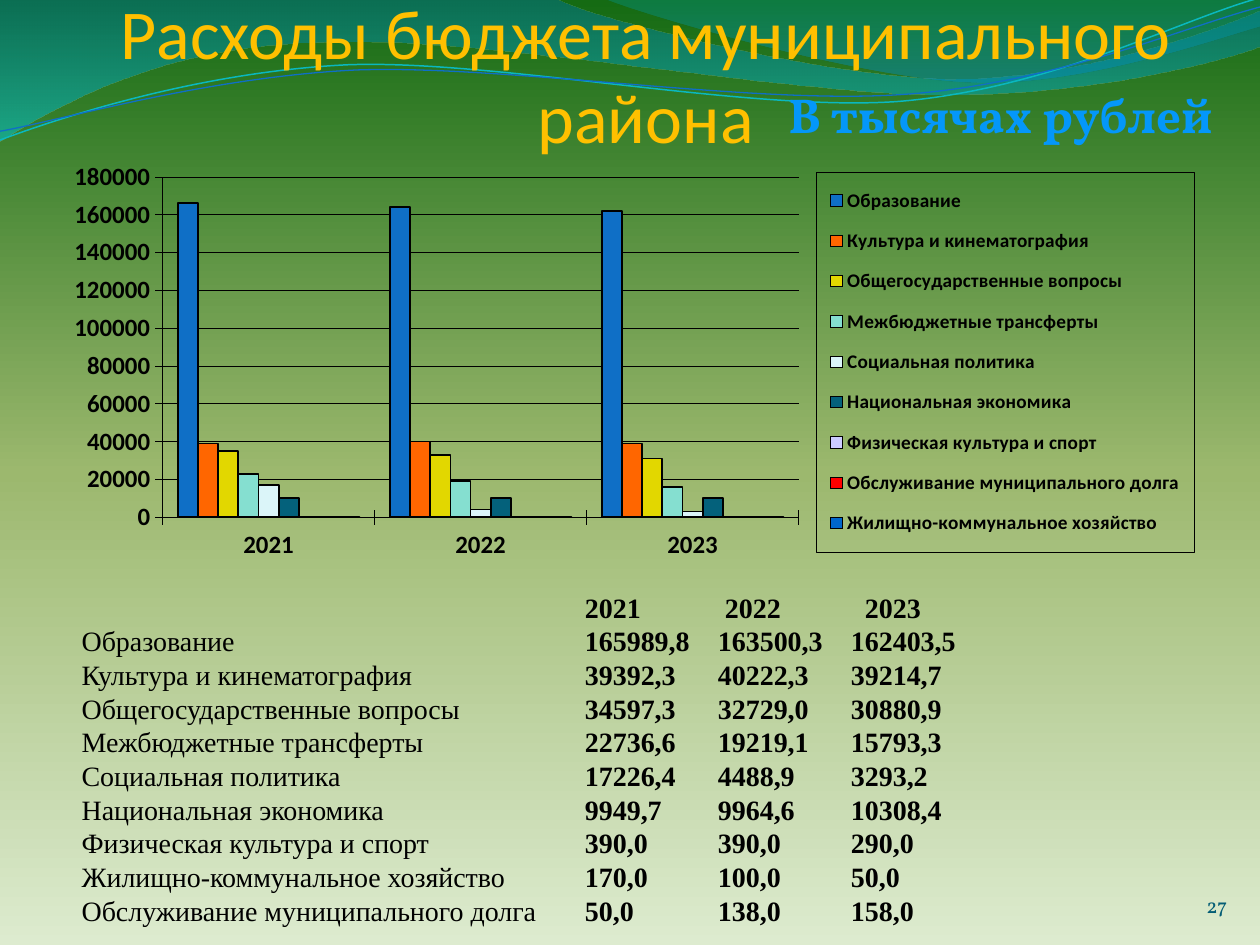
"""Build the slide on municipal district budget expenditure, 2021 to 2023."""
from dataclasses import dataclass
from math import cos, radians, sin
from typing import Optional

from lxml import etree
from pptx import Presentation
from pptx import util as u
from pptx.chart.data import CategoryChartData
from pptx.dml.color import RGBColor
from pptx.enum import chart as charts, text
from pptx.oxml import parse_xml
from pptx.oxml.ns import nsdecls, qn

COLORS = {
    "black": "000000", "gold": "FFC000", "page": "045D75",
    "cyan": "0AB8BF", "blue": "0F6FC6", "orange": "FF6600",
    "yellow": "E2D700", "mint": "85DFD0", "ice": "DBF5F9",
    "petrol": "04617B", "lilac": "CCCCFF", "red": "FF0000",
    "royal": "0066CC", "pale": "DDEBCF", "olive": "9CB86E",
    "forest": "156B13", "sea": "0074A1", "aqua": "00C6CF",
    "teal": "00A1A9", "lake": "008BBF", "sky": "7DC4FF", "azure": "0497F9",
}
YEARS = ("2021", "2022", "2023")
PIVOT = (359.5, 42)


@dataclass(frozen=True)
class Expense:
    """One budget line with its yearly amounts."""
    name: str
    color: str
    amounts: tuple


@dataclass(frozen=True)
class Wave:
    """A curved outline; one-point steps are straight, three-point steps are Bezier."""
    start: tuple
    steps: tuple
    stops: tuple = ()
    color: Optional[str] = None
    weight: float = 0
    tilt: float = 0


@dataclass(frozen=True)
class Label:
    """A single line of text in a box."""
    words: str
    box: tuple
    font: str
    size: float
    align: text.PP_ALIGN
    color: str = "black"
    stops: tuple = ()
    bold: bool = False
    anchor: text.MSO_ANCHOR = text.MSO_ANCHOR.TOP
    insets: tuple = (7.2, 3.6, 7.2, 3.6)


EXPENSES = (
    Expense("Образование", "blue", (165989.8, 163500.3, 162403.5)),
    Expense("Культура и кинематография", "orange", (39392.3, 40222.3, 39214.7)),
    Expense("Общегосударственные вопросы", "yellow", (34597.3, 32729.0, 30880.9)),
    Expense("Межбюджетные трансферты", "mint", (22736.6, 19219.1, 15793.3)),
    Expense("Социальная политика", "ice", (17226.4, 4488.9, 3293.2)),
    Expense("Национальная экономика", "petrol", (9949.7, 9964.6, 10308.4)),
    Expense("Физическая культура и спорт", "lilac", (390.0, 390.0, 290.0)),
    Expense("Обслуживание муниципального долга", "red", (50.0, 138.0, 158.0)),
    Expense("Жилищно-коммунальное хозяйство", "royal", (170.0, 100.0, 50.0)),
)
WAVES = (
    Wave((0, -1), (((317, -1),), ((343, 12), (478, 45), (546, 45)),
                   ((614, 45), (690, 19), (720, 6)), ((721, 26),),
                   ((708, 32), (626, 55), (537, 54)), ((447, 54), (275, 20), (185, 24)),
                   ((93, 25), (33, 60), (-1, 81))),
         stops=((0, "sea", 45), (100, "aqua", 55))),
    Wave((345, -1), (((366, 8), (491, 45), (554, 47)), ((616, 50), (692, 23), (720, 15)),
                     ((720, 0),)),
         stops=((0, "teal", 30), (80, "lake", 45))),
    Wave((0, 80), (((35, 67), (114, 41), (199, 37)), ((284, 34), (427, 64), (513, 58)),
                   ((600, 51), (675, 11), (719, -1))), color="cyan", weight=0.85, tilt=-2.7),
    Wave((0, 75), (((34, 69), (118, 44), (204, 40)), ((290, 37), (430, 60), (516, 54)),
                   ((602, 48), (678, 15), (720, 4))), color="blue", weight=0.75, tilt=-2.7),
)
LABELS = (
    Label("Расходы бюджета муниципального района", (45, 33.8, 648, 56.2), "Calibri", 40,
          text.PP_ALIGN.CENTER, "gold", anchor=text.MSO_ANCHOR.BOTTOM, insets=(0, 3.6, 0, 0)),
    Label("В тысячах рублей", (423.4, 44.6, 296.6, 41), "Vollkorn", 28, text.PP_ALIGN.CENTER,
          stops=((0, "sky", 100), (75, "azure", 100), (100, "sea", 100)), bold=True),
    Label("27", (641.5, 495.4, 59.8, 28.8), "Vollkorn", 12, text.PP_ALIGN.RIGHT, "page",
          anchor=text.MSO_ANCHOR.BOTTOM, insets=(0, 0, 0, 0)),
)


def rgb(name: str) -> RGBColor:
    return RGBColor.from_string(COLORS[name])


def set_gradient(fill, parent, stops: tuple, angle: int) -> None:
    fill.solid()
    marks = "".join(
        f'<a:gs pos="{place * 1000}"><a:srgbClr val="{COLORS[color]}">'
        + (f'<a:alpha val="{alpha * 1000}"/>' if alpha < 100 else "")
        + "</a:srgbClr></a:gs>" for place, color, alpha in stops)
    parent.replace(parent.find(qn("a:solidFill")), parse_xml(
        f'<a:gradFill {nsdecls("a")} rotWithShape="1"><a:gsLst>{marks}</a:gsLst>'
        f'<a:lin ang="{angle * 60000}" scaled="1"/></a:gradFill>'))


def style_font(font, name: str, size: float, color: str = "black", bold: bool = False) -> None:
    font.name, font.size, font.bold = name, u.Pt(size), bold
    font.color.rgb = rgb(color)


def style_line(line, color: str, weight: float) -> None:
    line.color.rgb = rgb(color)
    line.width = u.Pt(weight)


def level(point: tuple, tilt: float) -> tuple:
    turn = radians(-tilt)
    x, y = point[0] - PIVOT[0], point[1] - PIVOT[1]
    return (u.Pt(PIVOT[0] + x * cos(turn) - y * sin(turn)),
            u.Pt(PIVOT[1] + x * sin(turn) + y * cos(turn)))


def draw_wave(slide, wave: Wave) -> None:
    builder = slide.shapes.build_freeform(*level(wave.start, wave.tilt))
    builder.add_line_segments([level(point, wave.tilt) for step in wave.steps for point in step],
                              close=bool(wave.stops))
    ribbon = builder.convert_to_shape()
    ribbon.rotation = wave.tilt
    ribbon.shadow.inherit = False
    legs = iter(ribbon.element.findall(".//" + qn("a:lnTo")))
    for step in wave.steps:
        first, *others = [next(legs) for _ in step]
        if others:
            first.tag = qn("a:cubicBezTo")
            for leg in others:
                first.append(leg[0])
                leg.getparent().remove(leg)
    if wave.stops:
        set_gradient(ribbon.fill, ribbon.element.spPr, wave.stops, 90)
        ribbon.line.fill.background()
    else:
        ribbon.fill.background()
        style_line(ribbon.line, wave.color, wave.weight)


def draw_label(slide, label: Label) -> None:
    frame = slide.shapes.add_textbox(*map(u.Pt, label.box)).text_frame
    frame.word_wrap, frame.vertical_anchor = True, label.anchor
    (frame.margin_left, frame.margin_top,
     frame.margin_right, frame.margin_bottom) = map(u.Pt, label.insets)
    line = frame.paragraphs[0]
    line.alignment = label.align
    style_font(line.font, label.font, label.size, label.color, label.bold)
    words = line.add_run()
    words.text = label.words
    if label.stops:
        set_gradient(words.font.fill, words._r.get_or_add_rPr(), label.stops, 90)


def set_layout(parent, index: int, percents: tuple, inner: bool = False) -> None:
    for old in parent.findall(qn("c:layout")):
        parent.remove(old)
    layout = etree.Element(qn("c:layout"))
    manual = etree.SubElement(layout, qn("c:manualLayout"))
    settings = [("layoutTarget", "inner")] if inner else []
    settings += [("xMode", "edge"), ("yMode", "edge")]
    settings += [(side, f"{percent / 100:.3f}") for side, percent in zip("xywh", percents)]
    for tag, value in settings:
        etree.SubElement(manual, qn(f"c:{tag}")).set("val", value)
    parent.insert(index, layout)


def frame_xml(line: str):
    return parse_xml(f'<c:spPr {nsdecls("c", "a")}><a:noFill/>{line}</c:spPr>')


def draw_chart(slide) -> None:
    data = CategoryChartData(number_format="0")
    data.categories = YEARS
    for expense in EXPENSES:
        data.add_series(expense.name, [int(round(amount, -3)) for amount in expense.amounts])
    chart = slide.shapes.add_chart(charts.XL_CHART_TYPE.COLUMN_CLUSTERED,
                                   *map(u.Pt, (33.8, 84.2, 650.2, 248.4)), data).chart
    style_font(chart.font, "Calibri", 14.2, bold=True)
    chart.has_title = False
    chart.has_legend = True
    chart.legend.position = charts.XL_LEGEND_POSITION.RIGHT
    chart.legend.include_in_layout = False
    style_font(chart.legend.font, "Calibri", 11, bold=True)
    plot = chart.plots[0]
    plot.gap_width, plot.overlap, plot.vary_by_categories = 150, 0, False
    for series, expense in zip(plot.series, EXPENSES):
        series.format.fill.solid()
        series.format.fill.fore_color.rgb = rgb(expense.color)
        style_line(series.format.line, "black", 1)
    for axis in (chart.category_axis, chart.value_axis):
        axis.major_tick_mark = charts.XL_TICK_MARK.CROSS
        style_font(axis.tick_labels.font, "Calibri", 14.2, bold=True)
        style_line(axis.format.line, "black", 0.25)
    chart.category_axis.tick_label_position = charts.XL_TICK_LABEL_POSITION.LOW
    style_line(chart.value_axis.major_gridlines.format.line, "black", 0.25)
    space = chart.element
    area, legend = space.find(".//" + qn("c:plotArea")), space.find(".//" + qn("c:legend"))
    set_layout(area, 0, (9.1, 6.8, 55.9, 78.3), inner=True)
    set_layout(legend, 1, (66.5, 5.7, 33.3, 87.4))
    no_line = "<a:ln><a:noFill/></a:ln>"
    area.append(frame_xml(no_line))
    space.find(qn("c:chart")).addnext(frame_xml(no_line))
    legend.find(qn("c:overlay")).addnext(frame_xml(
        f'<a:ln w="3175"><a:solidFill><a:srgbClr val="{COLORS["black"]}"/></a:solidFill></a:ln>'))


def draw_amounts(slide) -> None:
    frame = slide.shapes.add_textbox(*map(u.Pt, (39.6, 333.7, 652.3, 203.8))).text_frame
    frame.word_wrap = True
    rows = [("", YEARS, (287.6, 367.6, 447.6))]
    for expense in (*EXPENSES[:-2], EXPENSES[-1], EXPENSES[-2]):
        amounts = [f"{amount:.1f}".replace(".", ",") for amount in expense.amounts]
        rows.append((expense.name, amounts, (287.6, 363.6, 439.6)))
    for index, (name, values, stops) in enumerate(rows):
        row = frame.add_paragraph() if index else frame.paragraphs[0]
        row.line_spacing = u.Pt(19.25)
        tabs = etree.SubElement(row._p.get_or_add_pPr(), qn("a:tabLst"))
        for stop in stops:
            etree.SubElement(tabs, qn("a:tab"), pos=str(u.Pt(stop)), algn="l")
        style_font(row.font, "Times New Roman", 16)
        if name:
            row.add_run().text = name
        figures = row.add_run()
        figures.text = "".join("\t" + value for value in values)
        figures.font.bold = True


def main() -> None:
    deck = Presentation()
    deck.slide_width, deck.slide_height = u.Pt(720), u.Pt(540)
    slide = deck.slides.add_slide(deck.slide_layouts[6])
    set_gradient(slide.background.fill, slide.element.find(".//" + qn("p:bgPr")),
                 ((0, "pale", 100), (50, "olive", 100), (100, "forest", 100)), 270)
    for wave in WAVES:
        draw_wave(slide, wave)
    title, *others = LABELS
    draw_label(slide, title)
    draw_chart(slide)
    for label in others:
        draw_label(slide, label)
    draw_amounts(slide)
    deck.save("out.pptx")


if __name__ == "__main__":
    main()
